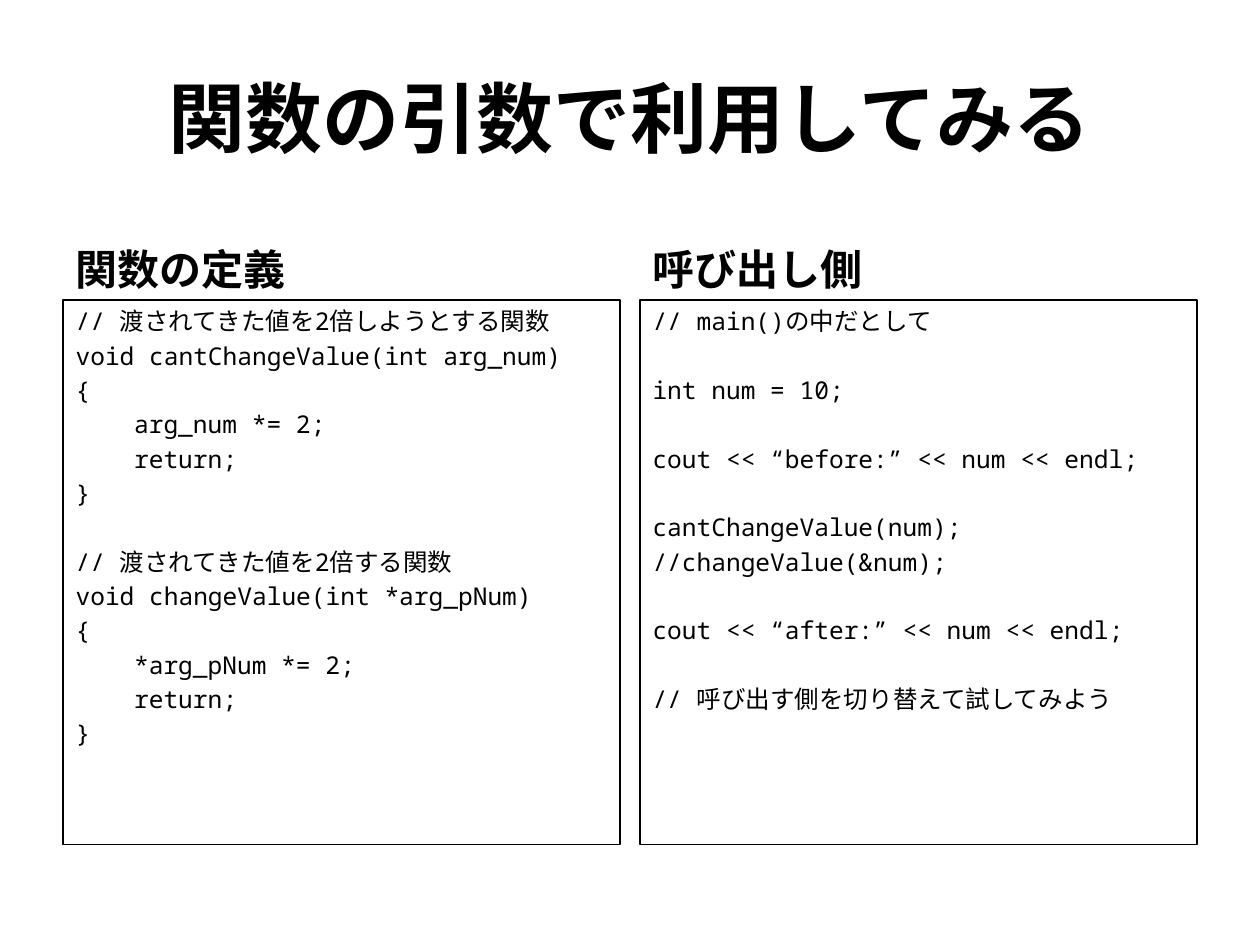
from lxml import etree
from pptx import Presentation
from pptx.dml.color import RGBColor
from pptx.enum.text import MSO_ANCHOR, MSO_AUTO_SIZE, PP_ALIGN
from pptx.oxml.ns import qn
from pptx.util import Cm, Pt

COLORS = {"text": "000000", "border": "000000", "background": "FFFFFF"}
HEADING_FONT = "League Spartan"
CODE_FONT = "Noto Sans Mono"
COMPARISON_LAYOUT = 4
CODE_SIZE = 14
LINE_GAP = 2.8  # 20 % of the code size
LINE_PITCH = 19.6
INDENT = Cm(1.18)  # four monospaced characters

# Each section of code is a list of (indent level, line)
COLUMNS = [
    ("関数の定義", [
        [(0, "// 渡されてきた値を2倍しようとする関数"),
         (0, "void cantChangeValue(int arg_num)"),
         (0, "{"),
         (1, "arg_num *= 2;"),
         (1, "return;"),
         (0, "}")],
        [(0, "// 渡されてきた値を2倍する関数"),
         (0, "void changeValue(int *arg_pNum)"),
         (0, "{"),
         (1, "*arg_pNum *= 2;"),
         (1, "return;"),
         (0, "}")],
    ]),
    ("呼び出し側", [
        [(0, "// main()の中だとして")],
        [(0, "int num = 10;")],
        [(0, "cout << “before:” << num << endl;")],
        [(0, "cantChangeValue(num);"),
         (0, "//changeValue(&num);")],
        [(0, "cout << “after:” << num << endl;")],
        [(0, "// 呼び出す側を切り替えて試してみよう")],
    ]),
]


def place(shape, left, top, width, height, anchor):
    shape.left, shape.top = Cm(left), Cm(top)
    shape.width, shape.height = Cm(width), Cm(height)
    shape.text_frame.auto_size = MSO_AUTO_SIZE.NONE
    shape.text_frame.vertical_anchor = anchor


def format_runs(paragraph, font_name, size, bold):
    for run in paragraph.runs:
        run.font.name = font_name
        run.font.size = Pt(size)
        run.font.bold = bold
        run.font.color.rgb = RGBColor.from_string(COLORS["text"])


presentation = Presentation()
presentation.slide_width = Cm(25.4)
presentation.slide_height = Cm(19.05)
slide = presentation.slides.add_slide(presentation.slide_layouts[COMPARISON_LAYOUT])
slide.background.fill.solid()
slide.background.fill.fore_color.rgb = RGBColor.from_string(COLORS["background"])
placeholders = list(slide.placeholders)

# Title
title = slide.shapes.title
place(title, 1.27, 0.76, 22.86, 3.18, MSO_ANCHOR.MIDDLE)
title.text_frame.text = "関数の引数で利用してみる"
title.text_frame.paragraphs[0].alignment = PP_ALIGN.CENTER
format_runs(title.text_frame.paragraphs[0], HEADING_FONT, 44, True)

# Two columns, each a heading above a framed code listing
for column, (heading_text, sections) in enumerate(COLUMNS):
    heading, code = placeholders[1 + 2 * column:3 + 2 * column]
    left = 1.27 + column * 11.63

    place(heading, left, 4.27, 11.23, 1.78, MSO_ANCHOR.BOTTOM)
    heading.text_frame.text = heading_text
    format_runs(heading.text_frame.paragraphs[0], HEADING_FONT, 24, True)

    place(code, left, 6.05, 11.23, 10.97, MSO_ANCHOR.TOP)
    code.line.color.rgb = RGBColor.from_string(COLORS["border"])
    code.line.width = Pt(0.75)
    lines = [line for section in sections for line in section]
    code.text_frame.text = "\n".join(text for _, text in lines)
    section_starts = [sum(map(len, sections[:index])) for index in range(1, len(sections))]
    for index, paragraph in enumerate(code.text_frame.paragraphs):
        # One line of space separates the sections
        extra = LINE_PITCH if index in section_starts else 0
        paragraph.space_before = Pt(LINE_GAP + extra)
        properties = paragraph._p.get_or_add_pPr()
        properties.set("marL", str(lines[index][0] * INDENT))
        properties.set("indent", "0")
        etree.SubElement(properties, qn("a:buNone"))
        format_runs(paragraph, CODE_FONT, CODE_SIZE, False)

presentation.save("out.pptx")
